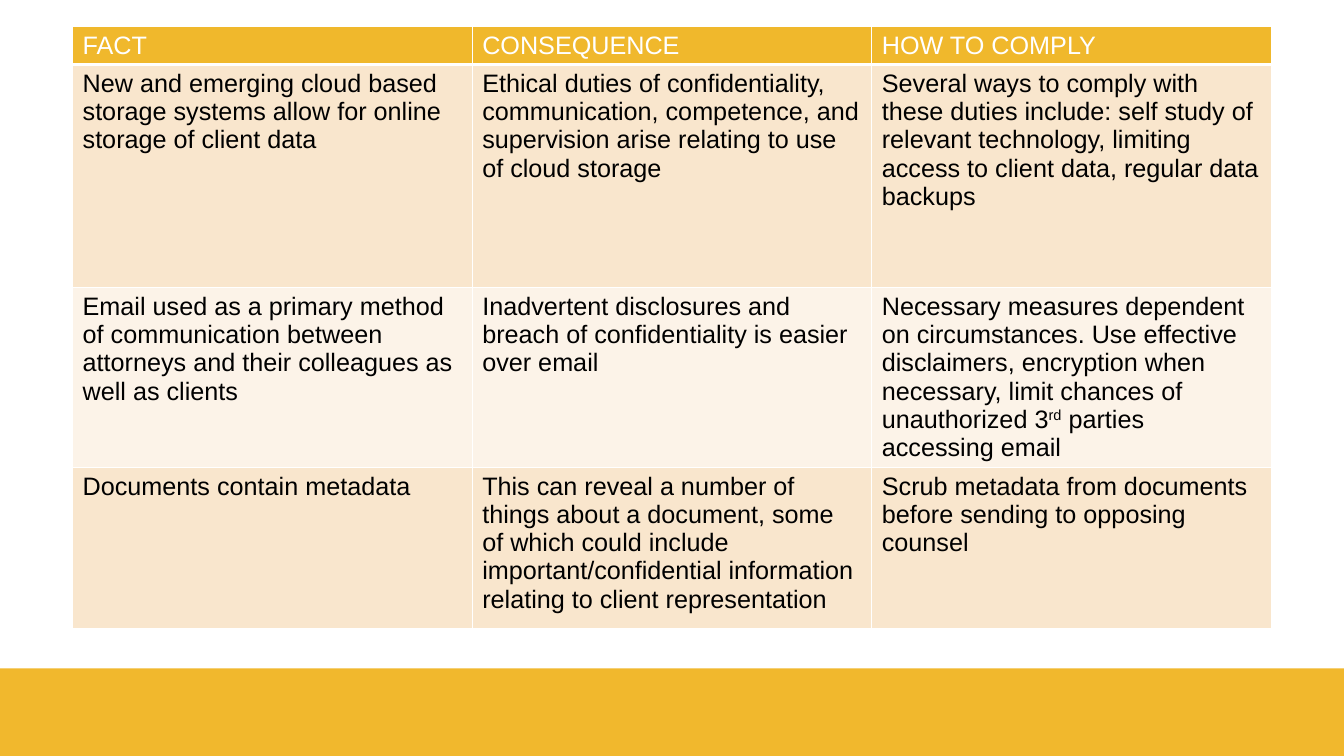
from lxml.etree import SubElement, Element
from pptx import Presentation
from pptx.dml.color import RGBColor
from pptx.enum.shapes import MSO_SHAPE as Shape
from pptx.oxml.ns import qn
from pptx.util import Cm, Pt

# Content: a cell is a string, or a tuple of text, superscript, text
ROWS = [
    ["FACT", "CONSEQUENCE", "HOW TO COMPLY"],
    [
        "New and emerging cloud based storage systems allow for online storage of client data",
        "Ethical duties of confidentiality, communication, competence, and supervision "
        "arise relating to use of cloud storage",
        "Several ways to comply with these duties include: self study of relevant "
        "technology, limiting access to client data, regular data backups",
    ],
    [
        "Email used as a primary method of communication between attorneys and their "
        "colleagues as well as clients",
        "Inadvertent disclosures and breach of confidentiality is easier over email",
        (
            "Necessary measures dependent on circumstances. Use effective disclaimers, "
            "encryption when necessary, limit chances of unauthorized 3",
            "rd",
            " parties accessing email",
        ),
    ],
    [
        "Documents contain metadata",
        "This can reveal a number of things about a document, some of which could include "
        "important/confidential information relating to client representation",
        "Scrub metadata from documents before sending to opposing counsel",
    ],
]
COLORS = {
    "band": "F1B82D",
    "header": "F0B82C",
    "odd": "F9E6CD",
    "even": "FCF3E8",
    "white": "FFFFFF",
    "text": "000000",
}
FONT, TEXT_SIZE = "Arial", 18
SLIDE_WIDTH, SLIDE_HEIGHT = 33.87, 19.05
BAND_HEIGHT = 2.21
TABLE_LEFT, TABLE_TOP, COLUMN_WIDTH = 1.83, 0.66, 10.07
ROW_HEIGHTS = [0.96, 5.62, 4.53, 4.06]


def color(name):
    return RGBColor.from_string(COLORS[name])


def set_borders(cell, widths):
    """Draw white borders; widths are points for left, right, top, bottom."""
    properties = cell._tc.get_or_add_tcPr()
    for index, (side, width) in enumerate(zip("LRTB", widths)):
        line = Element(qn(f"a:ln{side}"), w=str(Pt(width)))
        fill = SubElement(line, qn("a:solidFill"))
        SubElement(fill, qn("a:srgbClr"), val=COLORS["white"])
        properties.insert(index, line)


def fill_cell(cell, content, row_index):
    is_header = row_index == 0
    fill_name = "header" if is_header else ("odd" if row_index % 2 else "even")
    cell.fill.solid()
    cell.fill.fore_color.rgb = color(fill_name)
    set_borders(cell, (1, 1, 3 if row_index == 1 else 1, 3 if is_header else 1))

    parts = (content,) if isinstance(content, str) else content
    paragraph = cell.text_frame.paragraphs[0]
    for index, part in enumerate(parts):
        run = paragraph.add_run()
        run.text = part
        run.font.name = FONT
        run.font.size = Pt(TEXT_SIZE)
        run.font.bold = False
        run.font.color.rgb = color("white" if is_header else "text")
        if index == 1:
            run._r.get_or_add_rPr().set("baseline", "30000")


def main():
    presentation = Presentation()
    presentation.slide_width = Cm(SLIDE_WIDTH)
    presentation.slide_height = Cm(SLIDE_HEIGHT)
    slide = presentation.slides.add_slide(presentation.slide_layouts[6])

    # Bottom band
    band = slide.shapes.add_shape(
        Shape.RECTANGLE, 0, Cm(SLIDE_HEIGHT - BAND_HEIGHT), Cm(SLIDE_WIDTH), Cm(BAND_HEIGHT)
    )
    band.shadow.inherit = False
    band.fill.solid()
    band.fill.fore_color.rgb = color("band")
    band.line.fill.background()

    # Compliance table
    column_count = len(ROWS[0])
    table = slide.shapes.add_table(
        len(ROWS), column_count, Cm(TABLE_LEFT), Cm(TABLE_TOP),
        Cm(COLUMN_WIDTH * column_count), Cm(sum(ROW_HEIGHTS)),
    ).table
    for column in table.columns:
        column.width = Cm(COLUMN_WIDTH)
    for row_index, (row, height, contents) in enumerate(zip(table.rows, ROW_HEIGHTS, ROWS)):
        row.height = Cm(height)
        for cell, content in zip(row.cells, contents):
            fill_cell(cell, content, row_index)

    presentation.save("out.pptx")


if __name__ == "__main__":
    main()
